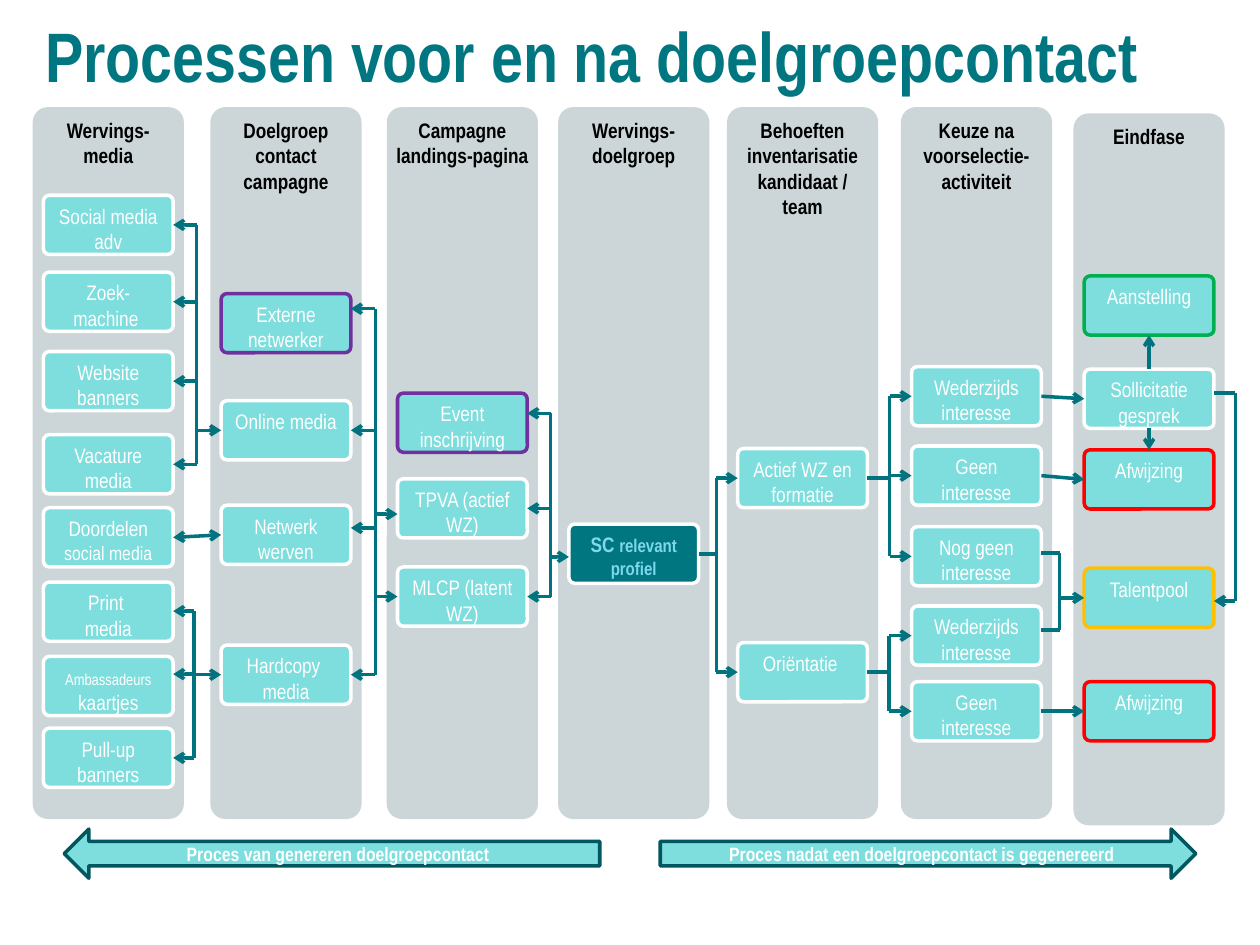
from dataclasses import dataclass
from typing import Optional, Union

from lxml.etree import SubElement
from pptx import Presentation
from pptx.dml.color import RGBColor
from pptx.enum.shapes import MSO_CONNECTOR, MSO_SHAPE
from pptx.enum.text import MSO_ANCHOR, PP_ALIGN
from pptx.oxml.ns import qn
from pptx.util import Inches, Pt

HUES = {
    "panel": "CCD6D8", "aqua": "7EDDDD", "teal": "007681", "line": "00737E",
    "edge": "00575F", "sky": "7FD7ED", "white": "FFFFFF", "black": "000000",
    "red": "FF0000", "green": "00B050", "gold": "FFC000", "plum": "7030A0",
}
FACE = "Arial Narrow"
COLS, ROWS = 100, 75  # grid of the slide
PAD = 0.85            # from column edge to box
BOX_W, BOX_H = 10.3, 4.7
TOP, LEFT, BOTTOM, RIGHT = range(4)
Text = Union[str, tuple]  # plain text, or (text, size) runs


@dataclass
class Box:
    key: str
    row: float
    text: Text
    edge: str = "white"
    fill: str = "aqua"
    ink: str = "white"
    bold: bool = False


@dataclass
class Column:
    left: float
    head: str
    boxes: list
    top: float = 8.5


@dataclass
class Branch:
    key: str
    side: int
    row: Optional[float] = None  # None: the middle of the side
    tip: bool = True


@dataclass
class Trunk:
    col: float
    arms: list


@dataclass
class Banner:
    left: float
    kind: int
    text: str


COLUMNS = [
    Column(2.6, "Wervings-media", [
        Box("social", 15.5, "Social media adv"),
        Box("search", 21.6, "Zoek- machine "),
        Box("site", 27.9, "Website banners"),
        Box("jobs", 34.5, "Vacature media"),
        Box("share", 40.3, (("Doordelen ", 12), ("social media", 11))),
        Box("print", 46.2, "Print \nmedia"),
        Box("cards", 52.1, (("Ambassadeurs", 9), (" kaartjes", 12))),
        Box("pullup", 57.8, "Pull-up banners")]),
    Column(16.7, "Doelgroep contact campagne", [
        Box("extern", 23.3, "Externe netwerker", "plum"),
        Box("online", 31.8, "Online media"),
        Box("network", 40.1, "Netwerk werven"),
        Box("hard", 51.2, "Hardcopy \nmedia")]),
    Column(30.7, "Campagne landings-pagina", [
        Box("event", 31.2, "Event inschrijving", "plum"),
        Box("active", 38, "TPVA (actief WZ)"),
        Box("latent", 45, "MLCP (latent WZ)")]),
    Column(44.3, "Wervings-doelgroep", [
        Box("profile", 41.6, (("SC ", 12), ("relevant profiel", 10.5)),
            fill="teal", ink="sky", bold=True)]),
    Column(57.7, "Behoeften inventarisatie kandidaat / team", [
        Box("form", 35.6, "Actief WZ en formatie"),
        Box("orient", 51, "Oriëntatie ")]),
    Column(71.5, "Keuze na voorselectie-activiteit", [
        Box("both1", 29.1, "Wederzijds interesse"),
        Box("none1", 35.4, "Geen interesse"),
        Box("notyet", 41.8, "Nog geen interesse"),
        Box("both2", 48.1, "Wederzijds interesse"),
        Box("none2", 54.1, "Geen interesse")]),
    Column(85.2, "Eindfase", [
        Box("hired", 21.9, "Aanstelling", "green"),
        Box("talk", 29.3, "Sollicitatie gesprek"),
        Box("reject1", 35.7, "Afwijzing", "red"),
        Box("pool", 45.1, "Talentpool", "gold"),
        Box("reject2", 54.1, "Afwijzing", "red")], top=9),
]

TRUNKS = [
    Trunk(15.6, [Branch(k, RIGHT) for k in ("social", "search", "site", "jobs")]
          + [Branch("online", LEFT)]),
    Trunk(15.4, [Branch("print", RIGHT, 48.5), Branch("cards", RIGHT, 53.5),
                 Branch("pullup", RIGHT), Branch("hard", LEFT)]),
    Trunk(29.8, [Branch("extern", RIGHT, 24.5), Branch("online", RIGHT),
                 Branch("network", RIGHT, 41.9), Branch("hard", RIGHT),
                 Branch("active", LEFT, 40.8), Branch("latent", LEFT)]),
    Trunk(43.7, [Branch("event", RIGHT, 32.8), Branch("active", RIGHT),
                 Branch("latent", RIGHT), Branch("profile", LEFT, 44.2)]),
    Trunk(56.85, [Branch("profile", RIGHT, tip=False), Branch("form", LEFT),
                  Branch("orient", LEFT)]),
    Trunk(70.6, [Branch("form", RIGHT, tip=False), Branch("both1", LEFT),
                 Branch("none1", LEFT), Branch("notyet", LEFT)]),
    Trunk(70.55, [Branch("orient", RIGHT, tip=False), Branch("both2", LEFT),
                  Branch("none2", LEFT)]),
    Trunk(84.1, [Branch("notyet", RIGHT, 43.9, False),
                 Branch("both2", RIGHT, 50, False), Branch("pool", LEFT)]),
    Trunk(98.05, [Branch("talk", RIGHT, 31.2, False),
                  Branch("pool", RIGHT, 47.7)]),
]

LINKS = [("both1", RIGHT, "talk", LEFT), ("none1", RIGHT, "reject1", LEFT),
         ("none2", RIGHT, "reject2", LEFT), ("talk", TOP, "hired", BOTTOM),
         ("talk", BOTTOM, "reject1", TOP)]

BANNERS = [
    Banner(52.4, MSO_SHAPE.RIGHT_ARROW,
           "Proces nadat een doelgroepcontact is gegenereerd"),
    Banner(5.1, MSO_SHAPE.LEFT_ARROW, "Proces van genereren doelgroepcontact"),
]

deck = Presentation()
deck.slide_width, deck.slide_height = Inches(10), Inches(7.5)
slide = deck.slides.add_slide(deck.slide_layouts[6])
shapes = slide.shapes


def hue(name: str) -> RGBColor:
    return RGBColor.from_string(HUES[name])


def across(cols: float) -> int:
    return round(deck.slide_width * cols / COLS)


def down(rows: float) -> int:
    return round(deck.slide_height * rows / ROWS)


def area(left: float, top: float, wide: float, high: float) -> tuple:
    return across(left), down(top), across(wide), down(high)


def write(frame, text: Text, size: float, ink: str, bold: bool,
          align=PP_ALIGN.CENTER) -> None:
    frame.word_wrap = True
    parts = text.split("\n") if isinstance(text, str) else [text]
    for i, part in enumerate(parts):
        para = frame.add_paragraph() if i else frame.paragraphs[0]
        para.alignment = align
        font = para.font
        font.name, font.bold, font.color.rgb = FACE, bold, hue(ink)
        if isinstance(part, str):
            font.size = Pt(size)
            para.add_run().text = part
            continue
        for words, points in part:
            run = para.add_run()
            run.text, run.font.size = words, Pt(points)


def block(kind: int, place: tuple, fill: str, edge: Optional[str] = None):
    shape = shapes.add_shape(kind, *place)
    shape.shadow.inherit = False
    shape.fill.solid()
    shape.fill.fore_color.rgb = hue(fill)
    if edge:
        shape.line.color.rgb, shape.line.width = hue(edge), Pt(2)
    else:
        shape.line.fill.background()
    if kind == MSO_SHAPE.ROUNDED_RECTANGLE:
        shape.adjustments[0] = 0.1
        shape.text_frame.vertical_anchor = MSO_ANCHOR.TOP
    return shape


def wire(start: tuple = (0, 0), end: tuple = (0, 0), tips: tuple = ()):
    """Draw a line between grid points; tips names its arrowhead ends."""
    line = shapes.add_connector(MSO_CONNECTOR.STRAIGHT, across(start[0]),
                                down(start[1]), across(end[0]), down(end[1]))
    line.line.color.rgb, line.line.width = hue("line"), Pt(2)
    stroke = line.line._get_or_add_ln()
    for tip in tips:
        SubElement(stroke, qn(f"a:{tip}"), type="arrow")
    SubElement(line._element.spPr, qn("a:effectLst"))
    return line


def link(first: str, out: int, last: str, into: int,
         tips: tuple = ("tailEnd",)) -> None:
    line = wire(tips=tips)
    line.begin_connect(nodes[first], out)
    line.end_connect(nodes[last], into)


def spread(trunk: Trunk) -> None:
    """Draw the upright line and its arms to the boxes."""
    rows = []
    for arm in trunk.arms:
        left, top = spots[arm.key]
        row = top + BOX_H / 2 if arm.row is None else arm.row
        edge = left + BOX_W if arm.side == RIGHT else left
        line = wire((trunk.col, row), (edge, row),
                    ("tailEnd",) if arm.tip else ())
        if arm.row is None:
            line.end_connect(nodes[arm.key], arm.side)
        rows.append(row)
    wire((trunk.col, min(rows)), (trunk.col, max(rows)))


nodes, spots = {}, {}
for col in COLUMNS:
    panel = block(MSO_SHAPE.ROUNDED_RECTANGLE,
                  area(col.left, col.top, 12, 56.5), "panel")
    panel.text_frame.margin_left = panel.text_frame.margin_right = Inches(0.04)
    write(panel.text_frame, col.head, 12, "black", True)
    for box in col.boxes:
        spots[box.key] = col.left + PAD, box.row
        node = block(MSO_SHAPE.ROUNDED_RECTANGLE,
                     area(*spots[box.key], BOX_W, BOX_H), box.fill, box.edge)
        write(node.text_frame, box.text, 12, box.ink, box.bold)
        nodes[box.key] = node

for trunk in TRUNKS:
    spread(trunk)
for ends in LINKS:
    link(*ends)
link("share", RIGHT, "network", LEFT, ("headEnd", "tailEnd"))

for item in BANNERS:
    arrow = block(item.kind, area(item.left, 65.8, 42.5, 3.9), "aqua", "edge")
    arrow.text_frame.vertical_anchor = MSO_ANCHOR.MIDDLE
    write(arrow.text_frame, item.text, 11, "white", True)

title = shapes.add_textbox(*area(2.6, 1.3, 94.7, 5.8)).text_frame
write(title, "Processen voor en na doelgroepcontact", 40, "teal", True,
      PP_ALIGN.LEFT)
title.paragraphs[0].line_spacing = Pt(42)

deck.save("out.pptx")
